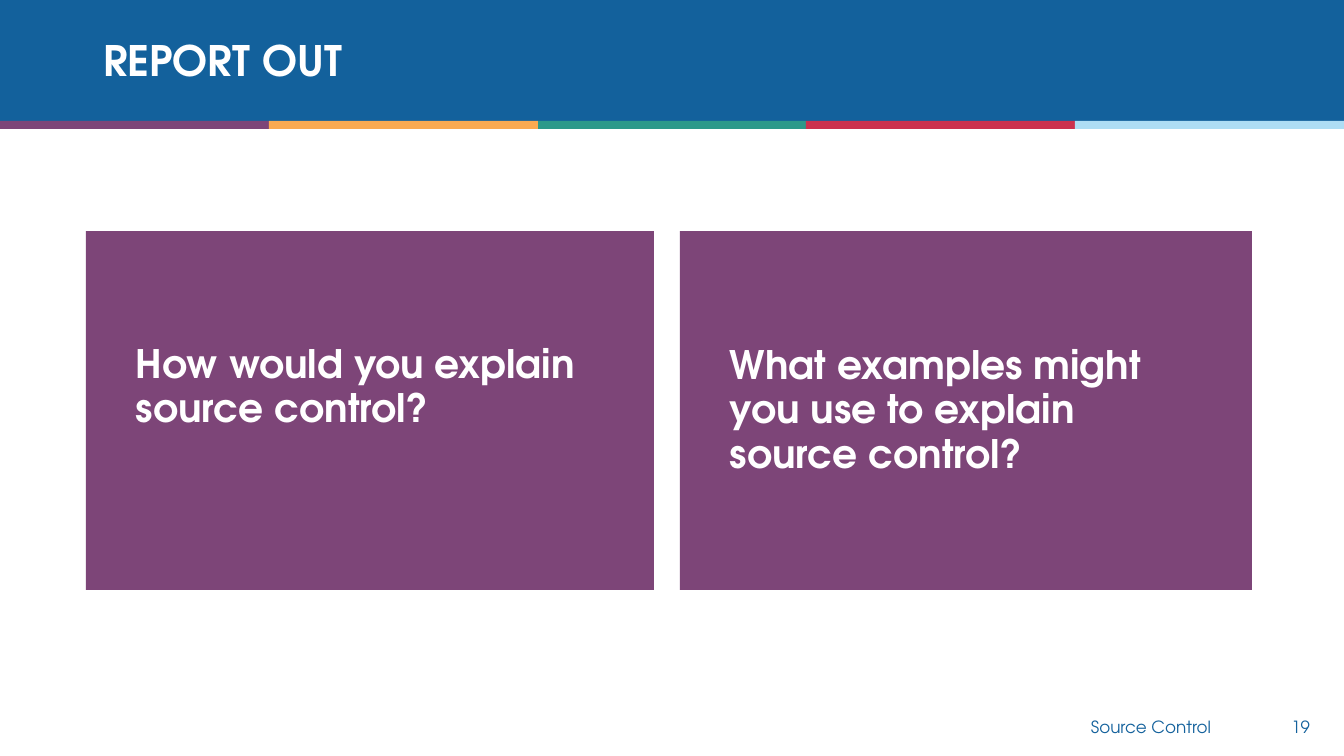
"""Build the Report Out slide with two discussion questions."""
import pptx
import pptx.dml.color
import pptx.enum.shapes
import pptx.enum.text
import pptx.oxml.ns
import pptx.util
from lxml import etree

BLUE = pptx.dml.color.RGBColor(0x13, 0x61, 0x9C)
PURPLE = pptx.dml.color.RGBColor(0x7D, 0x45, 0x78)
ORANGE = pptx.dml.color.RGBColor(0xFA, 0xAA, 0x51)
GREEN = pptx.dml.color.RGBColor(0x2C, 0x99, 0x8A)
RED = pptx.dml.color.RGBColor(0xCC, 0x31, 0x4E)
SKY = pptx.dml.color.RGBColor(0xAE, 0xDD, 0xF4)
WHITE = pptx.dml.color.RGBColor(0xFF, 0xFF, 0xFF)
FONT = "TeX Gyre Adventor"
WIDTH, HEIGHT = 1344, 756
ALIGN = pptx.enum.text.PP_ALIGN


def px(count):
    return pptx.util.Emu(round(count * 914400 / 100.8))


def write(box, place, words, size, colour, bold, align, spacing):
    box.left, box.top, box.width, box.height = map(px, place)
    frame = box.text_frame
    frame.word_wrap = True
    frame.auto_size = pptx.enum.text.MSO_AUTO_SIZE.NONE
    frame.vertical_anchor = pptx.enum.text.MSO_ANCHOR.MIDDLE
    para = frame.paragraphs[0]
    para.alignment = align
    para.line_spacing = spacing
    para.space_before = pptx.util.Pt(0)
    span = para.add_run()
    span.text = words
    span.font.name = FONT
    span.font.size = pptx.util.Pt(size)
    span.font.bold = bold
    span.font.color.rgb = colour


deck = pptx.Presentation()
deck.slide_width, deck.slide_height = px(WIDTH), px(HEIGHT)
page = deck.slides.add_slide(deck.slide_layouts[3])
title, *questions = page.placeholders

bars = [(0, 0, WIDTH, 126, BLUE)]
stripes = [PURPLE, ORANGE, GREEN, RED, SKY]
for index, colour in enumerate(stripes):
    left, right = (round(WIDTH * step / len(stripes)) for step in (index, index + 1))
    bars.append((left, 121, right - left, 8, colour))

for *place, colour in bars:
    bar = page.shapes.add_shape(pptx.enum.shapes.MSO_SHAPE.RECTANGLE, *map(px, place))
    bar.shadow.inherit = False
    bar.fill.solid()
    bar.fill.fore_color.rgb = colour
    bar.line.fill.background()

page.shapes.element.append(title.element)
write(title, (93, 40, 1111, 46), "REPORT OUT", 30, WHITE, True, ALIGN.LEFT, 0.9)

cards = [
    ((86, 231, 568, 359), "How would you explain source control?", 97),
    ((680, 231, 572, 359), "What examples might you use to explain source control?", 50),
]
for box, (place, words, bottom) in zip(questions, cards):
    page.shapes.element.append(box.element)
    box.fill.solid()
    box.fill.fore_color.rgb = PURPLE
    frame = box.text_frame
    frame.margin_left = frame.margin_right = frame.margin_top = px(50)
    frame.margin_bottom = px(bottom)
    properties = frame.paragraphs[0].font and frame.paragraphs[0]._p.get_or_add_pPr()
    for child in list(properties):
        properties.remove(child)
    properties.set("marL", "0")
    properties.set("indent", "0")
    etree.SubElement(properties, pptx.oxml.ns.qn("a:buNone"))
    write(box, place, words, 28, WHITE, True, ALIGN.LEFT, 0.95)

for place, words in [((516, 707, 705, 40), "Source Control"), ((1252, 707, 68, 40), "19")]:
    box = page.shapes.add_textbox(*map(px, place))
    write(box, place, words, 12, BLUE, False, ALIGN.RIGHT, 1.0)

deck.save("out.pptx")
